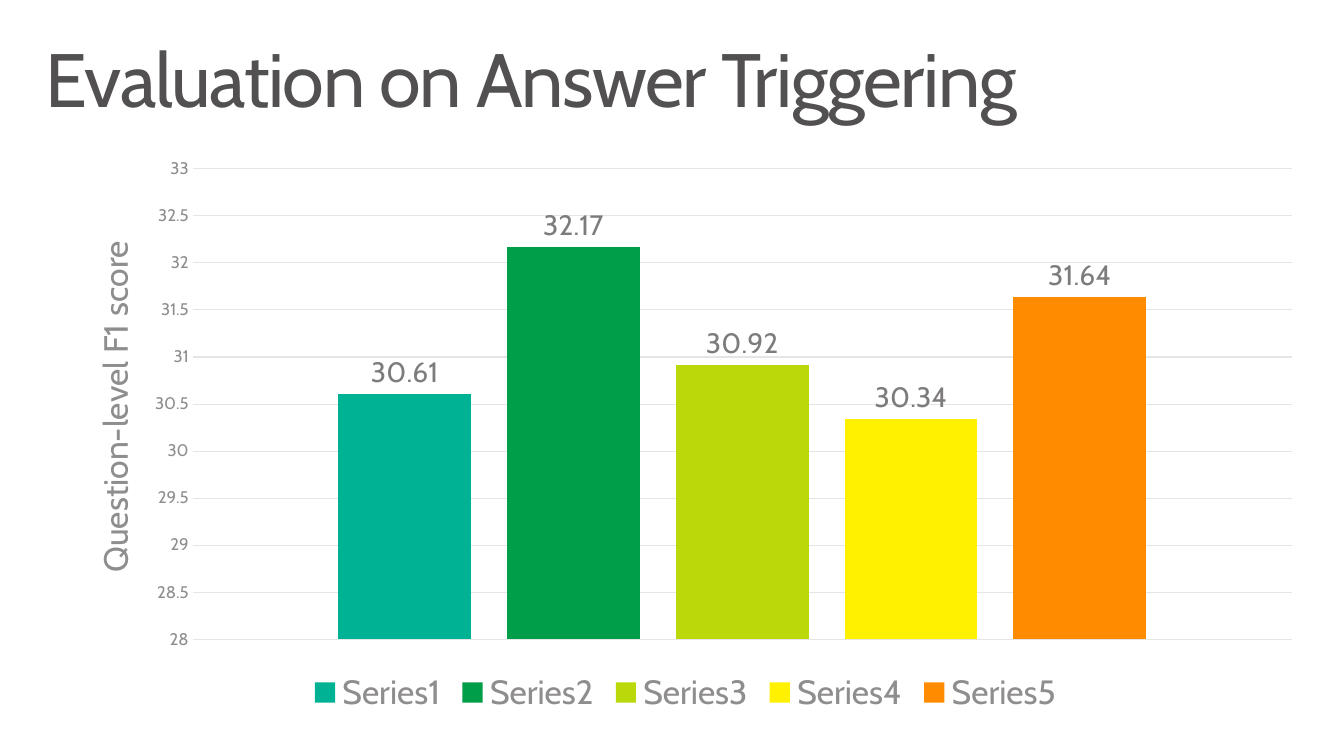
from typing import NamedTuple

from lxml import etree
from pptx import Presentation
from pptx import util as u
from pptx.chart.data import CategoryChartData
from pptx.dml.color import RGBColor
from pptx.enum import chart as charts
from pptx.enum import text
from pptx.oxml.ns import qn

WIDTH, HEIGHT = 13.33, 7.5
FONT = "Cabin"
DARK, GREY, LABEL_GREY, GRID_GREY = "525051", "8F8D8E", "7E7B7C", "E5E5E5"


class Area(NamedTuple):
    """A rectangle in shares of the slide's size."""
    left: float
    top: float
    width: float
    height: float

    def inches(self) -> list:
        return [u.Inches(share * side) for share, side in zip(self, (WIDTH, HEIGHT) * 2)]


class Bar(NamedTuple):
    name: str
    score: float
    fill: str


TITLE_AREA = Area(0.022, 0.043, 0.956, 0.13)
CHART_AREA = Area(0.04, 0.193, 0.94, 0.759)
BARS = [
    Bar("Series1", 30.61, "00B294"),
    Bar("Series2", 32.17, "009E49"),
    Bar("Series3", 30.92, "BAD80A"),
    Bar("Series4", 30.34, "FFF100"),
    Bar("Series5", 31.64, "FF8C00"),
]


def colour(value: str) -> RGBColor:
    return RGBColor.from_string(value)


def style_font(font, size: float, value: str) -> None:
    font.name, font.size, font.bold = FONT, u.Pt(size), False
    font.color.rgb = colour(value)


def set_layout(parent, **shares) -> None:
    """Place a chart part by shares of the chart's size."""
    layout = parent.find(qn("c:layout"))
    if layout is None:
        layout = etree.Element(qn("c:layout"))
        rich_text = parent.find(qn("c:tx"))
        parent.insert(0 if rich_text is None else 1, layout)
    for child in list(layout):
        layout.remove(child)
    manual = etree.SubElement(layout, qn("c:manualLayout"))
    if "w" in shares:
        etree.SubElement(manual, qn("c:layoutTarget"), val="inner")
    for side in ("x", "y"):
        etree.SubElement(manual, qn(f"c:{side}Mode"), val="edge")
    for side, share in shares.items():
        etree.SubElement(manual, qn(f"c:{side}"), val=str(share))


def add_title(page, wording: str) -> None:
    box = page.shapes.add_textbox(*TITLE_AREA.inches())
    frame = box.text_frame
    frame.word_wrap = True
    frame.margin_left = frame.margin_right = u.Inches(0.16)
    frame.margin_top = frame.margin_bottom = u.Inches(0.1)
    frame.text = wording
    para = frame.paragraphs[0]
    para.line_spacing = 0.9
    span = para.runs[0]
    style_font(span.font, 54, DARK)
    span.font._element.set("spc", "-100")


def style_score_axis(axis) -> None:
    axis.minimum_scale, axis.maximum_scale, axis.major_unit = 28, 33, 0.5
    axis.major_tick_mark = axis.minor_tick_mark = charts.XL_TICK_MARK.NONE
    axis.format.line.fill.background()
    axis.major_gridlines.format.line.color.rgb = colour(GRID_GREY)
    axis.major_gridlines.format.line.width = u.Pt(0.75)
    axis.tick_labels.number_format = "General"
    axis.tick_labels.number_format_is_linked = False
    style_font(axis.tick_labels.font, 12, GREY)
    frame = axis.axis_title.text_frame
    frame.text = "Question-level F1 score"
    style_font(frame.paragraphs[0].runs[0].font, 24, GREY)
    frame._txBody.find(qn("a:bodyPr")).set("rot", "-5400000")
    set_layout(axis.axis_title._element, x=0.025, y=0.155)


def style_bar(series, bar: Bar) -> None:
    series.format.fill.solid()
    series.format.fill.fore_color.rgb = colour(bar.fill)
    labels = series.data_labels
    labels.show_value = True
    labels.position = charts.XL_LABEL_POSITION.OUTSIDE_END
    style_font(labels.font, 20, LABEL_GREY)


def add_score_chart(page) -> None:
    chart_data = CategoryChartData()
    chart_data.categories = ["1"]
    for bar in BARS:
        chart_data.add_series(bar.name, [bar.score])
    chart = page.shapes.add_chart(
        charts.XL_CHART_TYPE.COLUMN_CLUSTERED, *CHART_AREA.inches(), chart_data).chart
    style_font(chart.font, 10, DARK)
    chart.has_title = False
    chart.category_axis.visible = False
    style_score_axis(chart.value_axis)

    plot = chart.plots[0]
    plot.vary_by_categories = False
    plot.gap_width, plot.overlap = 219, -27
    for series, bar in zip(plot.series, BARS):
        style_bar(series, bar)
    set_layout(chart._chartSpace.chart.plotArea, x=0.11, y=0.04, w=0.87, h=0.82)

    chart.has_legend = True
    chart.legend.position = charts.XL_LEGEND_POSITION.BOTTOM
    chart.legend.include_in_layout = False
    style_font(chart.legend.font, 24, GREY)


def main() -> None:
    deck = Presentation()
    deck.slide_width, deck.slide_height = u.Inches(WIDTH), u.Inches(HEIGHT)
    page = deck.slides.add_slide(deck.slide_layouts[6])
    add_score_chart(page)
    add_title(page, "Evaluation on Answer Triggering")
    deck.save("out.pptx")


if __name__ == "__main__":
    main()
